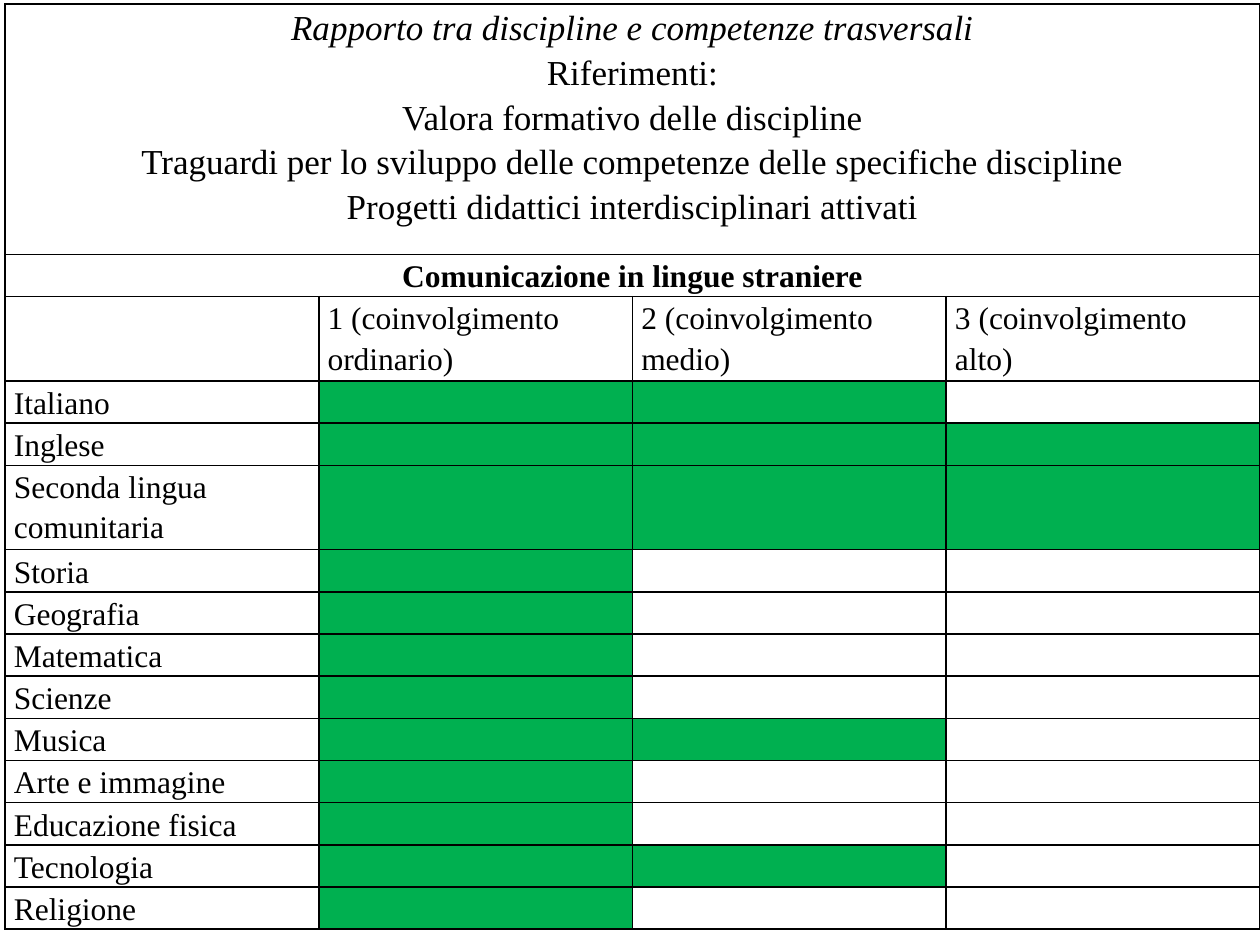
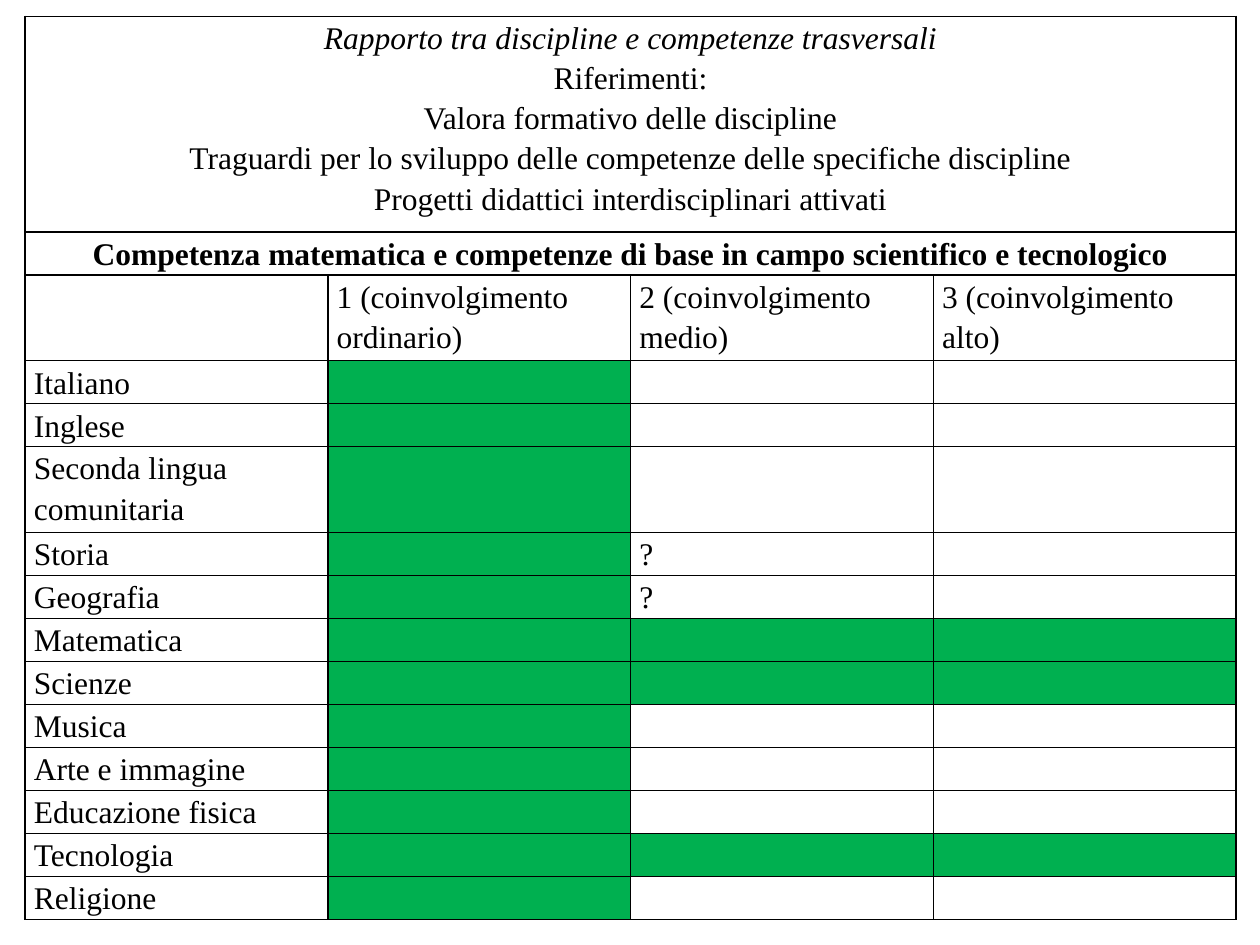
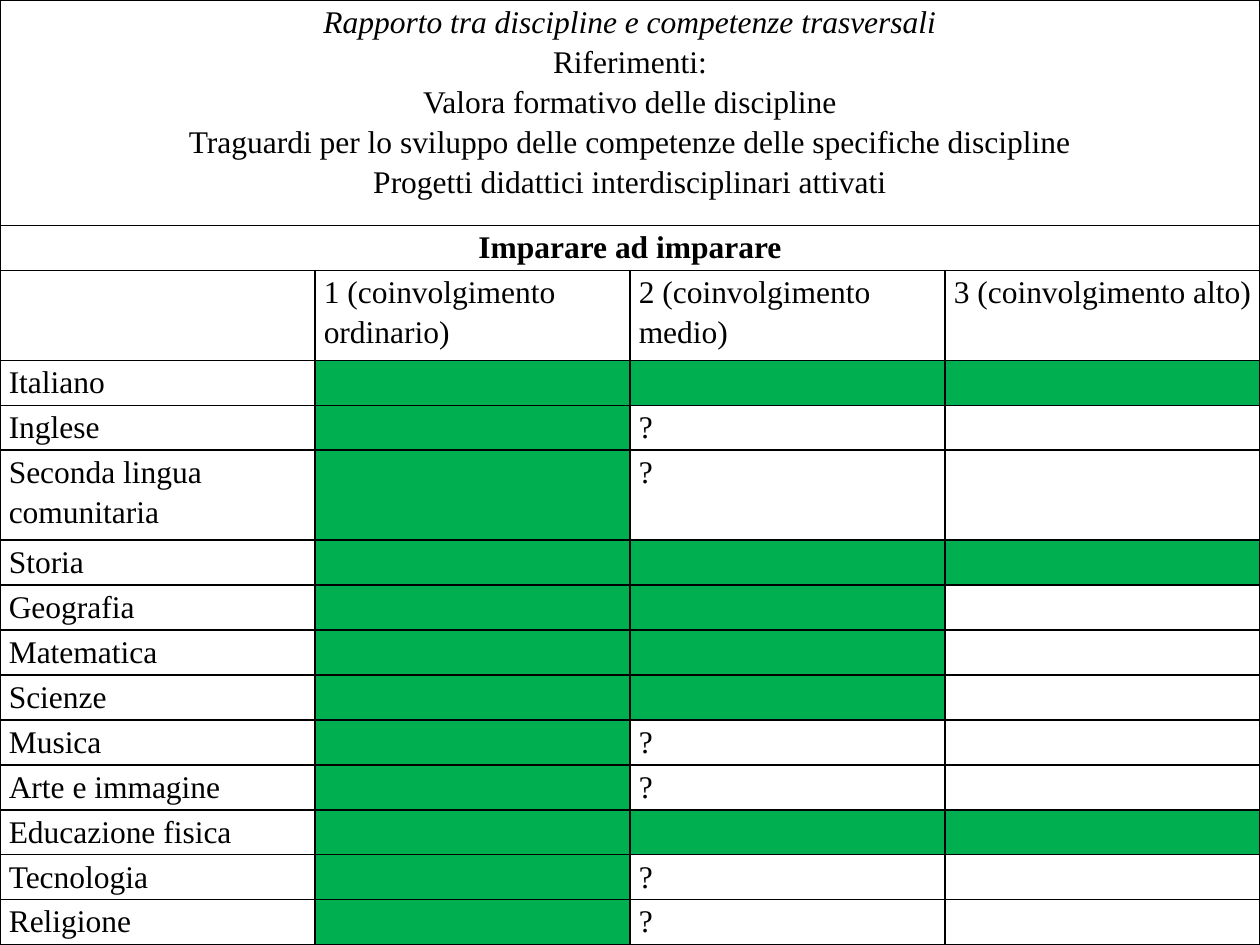
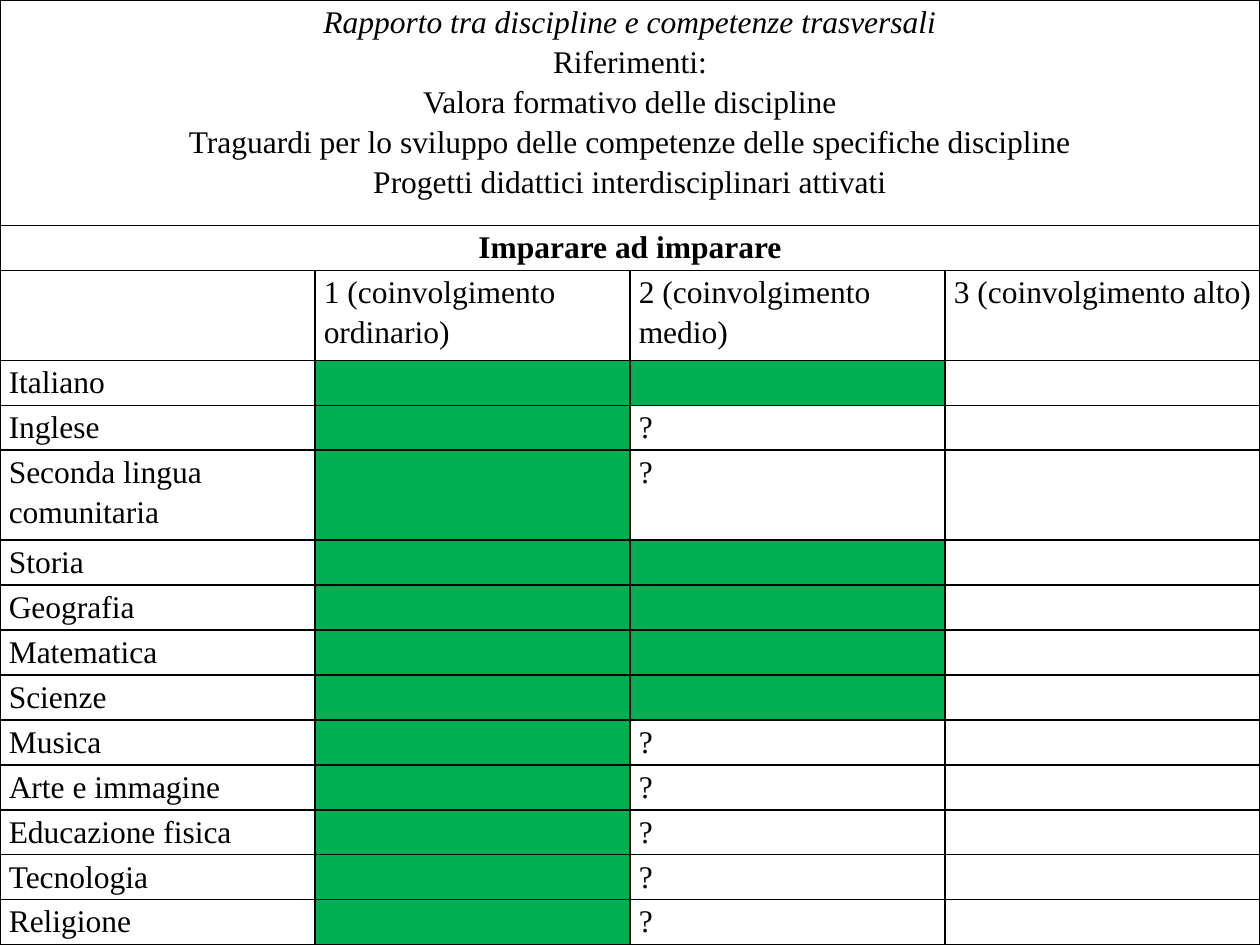
from dataclasses import dataclass

from lxml import etree
from pptx import Presentation
from pptx import util as u
from pptx.dml.color import RGBColor
from pptx.enum import text
from pptx.oxml import ns


@dataclass(frozen=True)
class Theme:
    font: str = "Times New Roman"
    ink: str = "000000"
    mark: str = "00B050"
    size: int = 18
    large: int = 20
    line: int = 1
    space: float = 1.15
    inset: float = 0.07


THEME = Theme()
INTRO = [
    "Rapporto tra discipline e competenze trasversali",
    "Riferimenti:",
    "Valora formativo delle discipline",
    "Traguardi per lo sviluppo delle competenze delle specifiche discipline",
    "Progetti didattici interdisciplinari attivati",
]
HEADS = ["1 (coinvolgimento ordinario)", "2 (coinvolgimento medio)", "3 (coinvolgimento alto)"]
TOPICS = [
    "Italiano", "Inglese", "Seconda lingua comunitaria", "Storia", "Geografia", "Matematica",
    "Scienze", "Musica", "Arte e immagine", "Educazione fisica", "Tecnologia", "Religione",
]
UNITS = [1, 2] + [2 if topic.startswith("Seconda") else 1 for topic in TOPICS]
COLS = 1 + len(HEADS)
FULL = {"box": (0, 0, 10, 7.5), "top": 1.79, "size": THEME.size}
PAGES = [
    {"box": (0.04, 0.03, 9.96, 7.35), "top": 1.99, "size": THEME.large,
     "skill": "Comunicazione in lingue straniere",
     "marks": "2 3 3 1 1 1 1 2 1 1 2 1"},
    {"box": (0.2, 0.13, 9.61, 7.17), "top": 1.71, "size": THEME.size,
     "skill": "Competenza matematica e competenze di base in campo scientifico e tecnologico",
     "marks": "1 1 1 1? 1? 3 3 1 1 1 3 1"},
    {**FULL, "skill": "Imparare ad imparare",
     "marks": "3 1? 1? 3 2 2 2 1? 1? 3 1? 1?"},
    {**FULL, "skill": "Imparare ad imparare",
     "marks": "2 1? 1? 2 2 2 2 1? 1? 1? 1? 1?"},
]


def assign(item, values):
    for name, value in values.items():
        setattr(item, name, value)


def border(cell):
    props = cell._tc.get_or_add_tcPr()
    for side in ("lnL", "lnR", "lnT", "lnB"):
        line = etree.SubElement(props, ns.qn(f"a:{side}"), w=str(u.Pt(THEME.line)))
        fill = etree.SubElement(line, ns.qn("a:solidFill"))
        etree.SubElement(fill, ns.qn("a:srgbClr"), val=THEME.ink)


def format_cell(cell):
    inset = u.Inches(THEME.inset)
    assign(cell, {"margin_left": inset, "margin_right": inset, "margin_top": 0, "margin_bottom": 0})
    border(cell)
    cell.fill.background()


def shade(cell):
    cell.fill.solid()
    cell.fill.fore_color.rgb = RGBColor.from_string(THEME.mark)


def write(cell, lines, size=THEME.size, align=text.PP_ALIGN.LEFT, bold=False, slant=False):
    frame = cell.text_frame
    for index, words in enumerate(lines):
        para = frame.add_paragraph() if index else frame.paragraphs[0]
        assign(para, {"alignment": align, "line_spacing": THEME.space})
        run = para.add_run()
        run.text = words
        assign(run.font, {"name": THEME.font, "size": u.Pt(size), "bold": bold,
                          "italic": slant and index == 0})
        run.font.color.rgb = RGBColor.from_string(THEME.ink)


def add_grid(slide, box, top):
    left, head, width, height = map(u.Inches, box)
    grid = slide.shapes.add_table(1 + len(UNITS), COLS, left, head, width, height).table
    assign(grid, {"first_row": False, "horz_banding": False})
    for col in grid.columns:
        col.width = width // COLS
    unit = (box[3] - top) / sum(UNITS)
    for row, tall in zip(grid.rows, [top] + [unit * count for count in UNITS]):
        row.height = u.Inches(tall)
    for cell in grid.iter_cells():
        format_cell(cell)
    return grid


def fill_heads(grid, skill, size):
    for row in range(2):
        grid.cell(row, 0).merge(grid.cell(row, COLS - 1))
    center = text.PP_ALIGN.CENTER
    write(grid.cell(0, 0), INTRO, size, center, slant=True)
    write(grid.cell(1, 0), [skill], align=center, bold=True)
    for col, head in enumerate(HEADS, 1):
        write(grid.cell(2, col), [head])


def fill_rows(grid, marks):
    for row, (topic, mark) in enumerate(zip(TOPICS, marks.split()), 3):
        write(grid.cell(row, 0), [topic])
        level = int(mark[0])
        for col in range(1, level + 1):
            shade(grid.cell(row, col))
        if mark.endswith("?"):
            write(grid.cell(row, level + 1), ["?"])


def add_page(deck, box, top, size, skill, marks):
    slide = deck.slides.add_slide(deck.slide_layouts[6])
    grid = add_grid(slide, box, top)
    fill_heads(grid, skill, size)
    fill_rows(grid, marks)


def main():
    deck = Presentation()
    assign(deck, {"slide_width": u.Inches(10), "slide_height": u.Inches(7.5)})
    for page in PAGES:
        add_page(deck, **page)
    deck.save("out.pptx")


if __name__ == "__main__":
    main()
